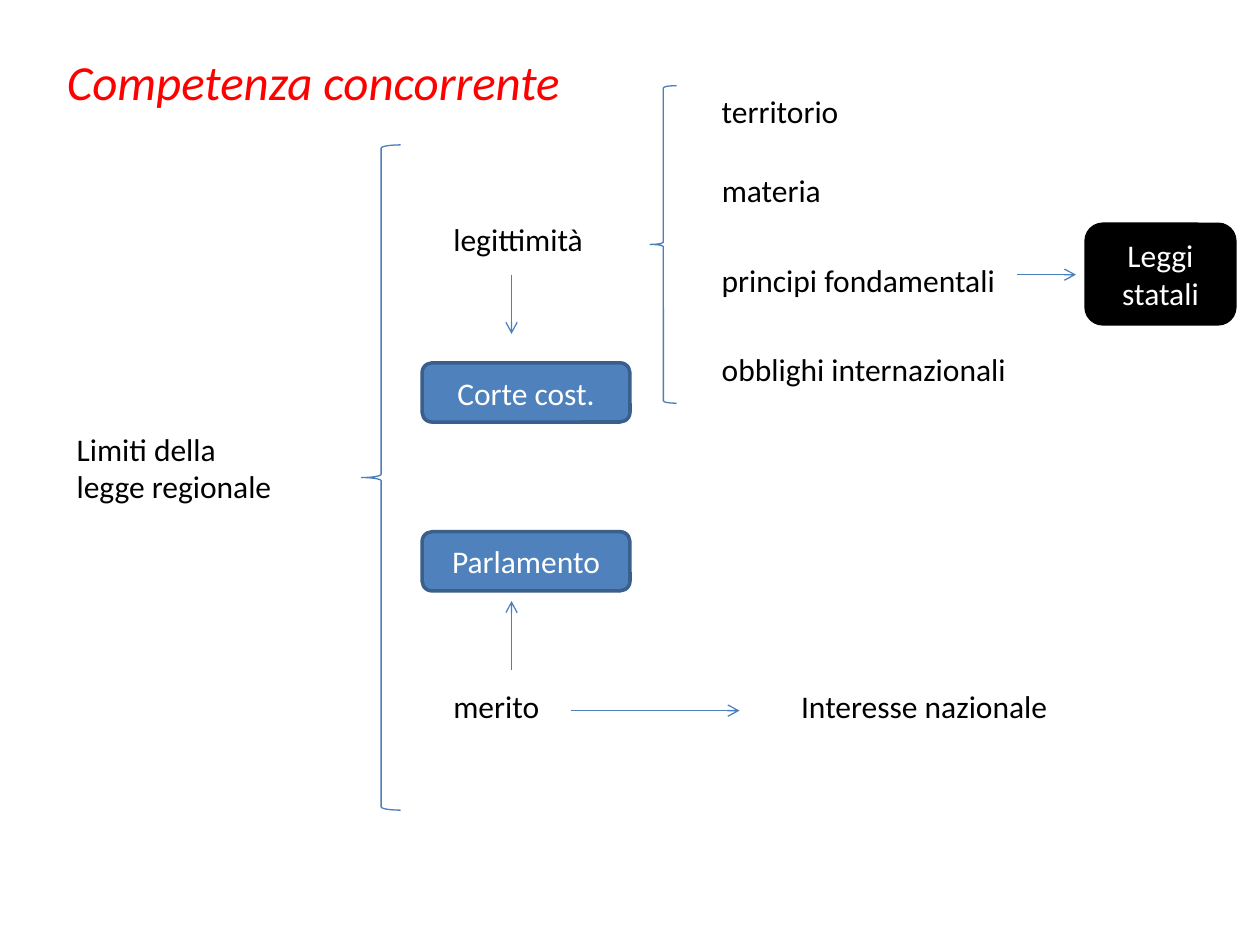
import pptx
import pptx.util
import pptx.dml.color
import pptx.enum.shapes
import pptx.enum.text
import pptx.oxml
from pptx.util import Inches

RGB = pptx.dml.color.RGBColor.from_string
SHAPE = pptx.enum.shapes.MSO_SHAPE
ALIGN = pptx.enum.text.PP_ALIGN
ANCHOR = pptx.enum.text.MSO_ANCHOR

theme = {
    "font": "Calibri",
    "title_size": pptx.util.Pt(28),
    "text_size": pptx.util.Pt(18),
    "title": RGB("FF0000"),
    "text": RGB("000000"),
    "box_text": RGB("FFFFFF"),
    "line": RGB("4B7EBC"),
    "body_fill": RGB("4F81BD"),
    "body_line": RGB("3A5F8C"),
    "law": RGB("000000"),
    "thin": pptx.util.Pt(0.75),
    "thick": pptx.util.Pt(2),
}


def write(frame, text, size, color, align=ALIGN.LEFT, anchor=ANCHOR.TOP):
    frame.text = text
    frame.word_wrap = True
    frame.vertical_anchor = anchor
    paragraph = frame.paragraphs[0]
    paragraph.alignment = align
    paragraph.font.name = theme["font"]
    paragraph.font.size = size
    paragraph.font.color.rgb = color


presentation = pptx.Presentation()
presentation.slide_width = Inches(10)
presentation.slide_height = Inches(7.5)
slide = presentation.slides.add_slide(presentation.slide_layouts[5])

title = slide.shapes.title
title.left, title.top = Inches(0.43), Inches(0.36)
title.width, title.height = Inches(4.57), Inches(0.57)
write(title.text_frame, "Competenza concorrente", theme["title_size"], theme["title"])
title.text_frame.paragraphs[0].font.italic = True

terms = [
    ("Limiti della legge regionale", 0.51, 3.36, 1.8, 0.71),
    ("legittimità", 3.5, 1.7, 1.65, 0.4),
    ("merito", 3.5, 5.4, 1.26, 0.4),
    ("Interesse nazionale", 6.26, 5.4, 2.6, 0.4),
    ("territorio", 5.63, 0.68, 1.73, 0.4),
    ("materia", 5.63, 1.31, 1.81, 0.4),
    ("principi fondamentali", 5.63, 2.02, 2.6, 0.4),
    ("obblighi internazionali", 5.63, 2.73, 2.76, 0.4),
]
for wording, *place in terms:
    term = slide.shapes.add_textbox(*map(Inches, place))
    write(term.text_frame, wording, theme["text_size"], theme["text"])

for place in [(2.87, 1.15, 0.31, 5.28), (5.16, 0.68, 0.21, 2.52)]:
    brace = slide.shapes.add_shape(SHAPE.LEFT_BRACE, *map(Inches, place))
    brace.shadow.inherit = False
    brace.fill.background()
    brace.line.color.rgb = theme["line"]
    brace.line.width = theme["thin"]

authorities = [
    ("Corte cost.", (3.35, 2.88, 1.65, 0.47), "body_fill", "body_line"),
    ("Parlamento", (3.35, 4.22, 1.65, 0.47), "body_fill", "body_line"),
    ("Leggi statali", (8.62, 1.78, 1.18, 0.79), "law", "law"),
]
for wording, place, fill, outline in authorities:
    authority = slide.shapes.add_shape(SHAPE.ROUNDED_RECTANGLE, *map(Inches, place))
    authority.shadow.inherit = False
    authority.fill.solid()
    authority.fill.fore_color.rgb = theme[fill]
    authority.line.color.rgb = theme[outline]
    authority.line.width = theme["thick"]
    write(authority.text_frame, wording, theme["text_size"], theme["box_text"],
          ALIGN.CENTER, ANCHOR.MIDDLE)

links = [
    (4.06, 2.18, 4.06, 2.65),
    (4.06, 5.32, 4.06, 4.77),
    (4.53, 5.64, 5.87, 5.64),
    (8.07, 2.18, 8.54, 2.18),
]
for ends in links:
    link = slide.shapes.add_connector(
        pptx.enum.shapes.MSO_CONNECTOR.STRAIGHT, *map(Inches, ends))
    link.line.color.rgb = theme["line"]
    link.line.width = theme["thin"]
    arrowhead = pptx.oxml.ns.qn("a:tailEnd")
    link.line._get_or_add_ln().makeelement(arrowhead)
    head = link.line._get_or_add_ln().makeelement(arrowhead, {"type": "arrow"})
    link.line._get_or_add_ln().append(head)
    properties = link._element.spPr
    properties.append(properties.makeelement(pptx.oxml.ns.qn("a:effectLst")))

presentation.save("out.pptx")
